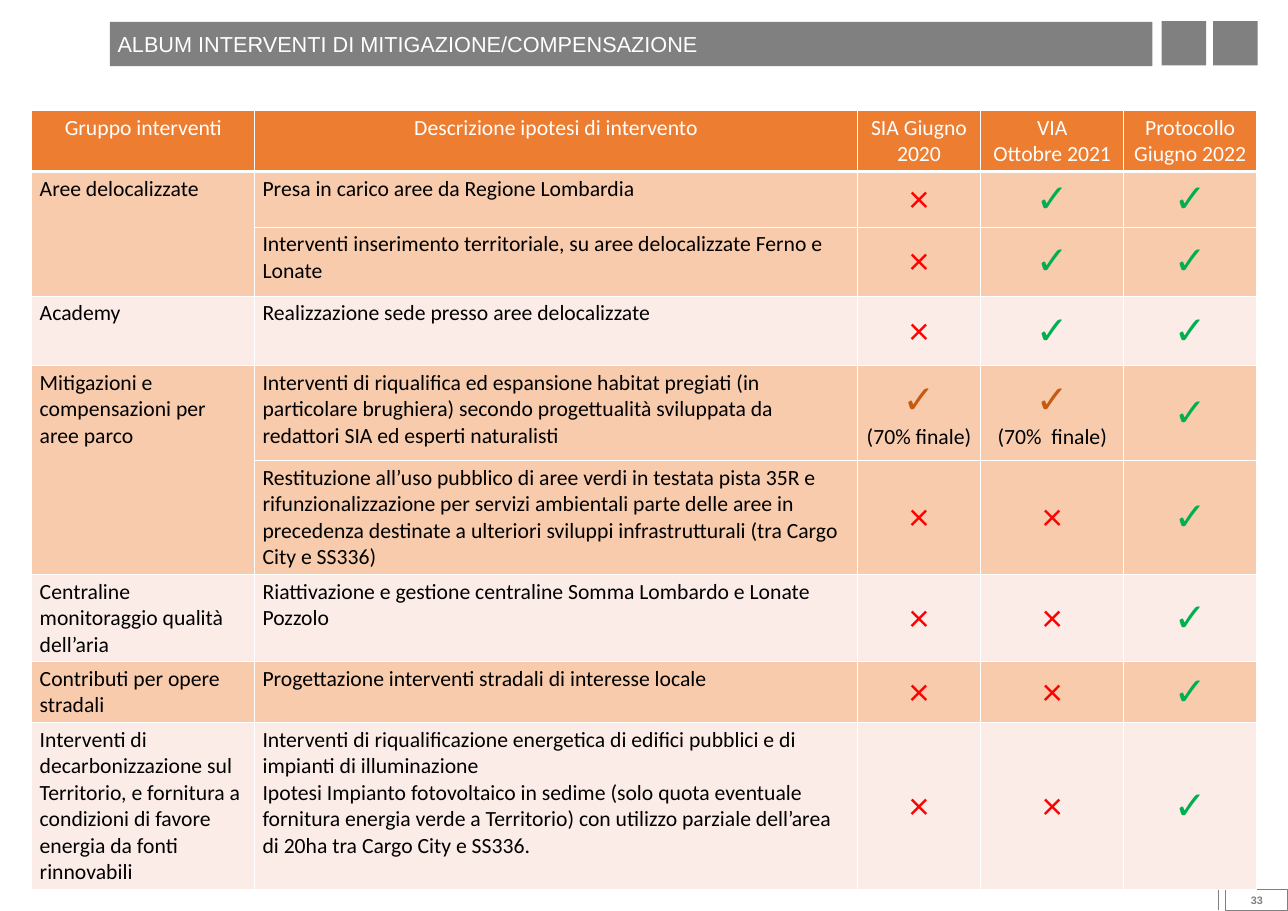
from lxml import etree
from pptx import Presentation
from pptx.dml.color import RGBColor
from pptx.enum.shapes import MSO_CONNECTOR, MSO_SHAPE
from pptx.enum.text import MSO_ANCHOR as Anchor, PP_ALIGN as Align
from pptx.oxml.ns import qn
from pptx.util import Inches, Pt

WHITE = RGBColor(0xFF, 0xFF, 0xFF)
BLACK = RGBColor(0x00, 0x00, 0x00)
GRAY = RGBColor(0x80, 0x80, 0x80)
ORANGE = RGBColor(0xED, 0x7D, 0x31)
PEACH = RGBColor(0xF8, 0xCB, 0xAD)
PINK = RGBColor(0xFC, 0xEC, 0xE8)
RED = RGBColor(0xFF, 0x00, 0x00)
GREEN = RGBColor(0x00, 0xB0, 0x50)
BROWN = RGBColor(0xC5, 0x5A, 0x11)

NO, YES = [("×", 36, RED)], [("✓", 36, GREEN)]
PARTIAL = ("✓", 36, BROWN)

HEADERS = ["Gruppo interventi", "Descrizione ipotesi di intervento", "SIA Giugno 2020",
           "VIA\nOttobre 2021", "Protocollo Giugno 2022"]
COLUMN_WIDTHS = [2.86, 7.73, 1.59, 1.83, 1.71]
ROW_HEIGHTS = [0.76, 0.66, 0.89, 0.89, 1.22, 1.01, 0.75, 0.7, 1.83]

# Group (empty when it continues the one above), fill, description, three outcomes
MEASURES = [
    ("Aree delocalizzate", PEACH, "Presa in carico aree da Regione Lombardia", NO, YES, YES),
    ("", PEACH, "Interventi inserimento territoriale, su aree delocalizzate Ferno e Lonate",
     NO, YES, YES),
    ("Academy", PINK, "Realizzazione sede presso aree delocalizzate", NO, YES, YES),
    ("Mitigazioni e compensazioni per aree parco", PEACH,
     "Interventi di riqualifica ed espansione habitat pregiati (in particolare brughiera) "
     "secondo progettualità sviluppata da redattori SIA ed esperti naturalisti",
     [PARTIAL, ("(70% finale)", 20, BLACK)], [PARTIAL, ("(70%  finale)", 20, BLACK)], YES),
    ("", PEACH,
     "Restituzione all’uso pubblico di aree verdi in testata pista 35R e rifunzionalizzazione "
     "per servizi ambientali parte delle aree in precedenza destinate a ulteriori sviluppi "
     "infrastrutturali (tra Cargo City e SS336)", NO, NO, YES),
    ("Centraline monitoraggio qualità dell’aria", PINK,
     "Riattivazione e gestione centraline Somma Lombardo e Lonate Pozzolo", NO, NO, YES),
    ("Contributi per opere stradali", PEACH,
     "Progettazione interventi stradali di interesse locale", NO, NO, YES),
    ("Interventi di decarbonizzazione sul Territorio, e fornitura a condizioni di favore "
     "energia da fonti rinnovabili", PINK,
     "Interventi di riqualificazione energetica di edifici pubblici e di impianti di "
     "illuminazione\vIpotesi Impianto fotovoltaico in sedime (solo quota eventuale fornitura "
     "energia verde a Territorio) con utilizzo parziale dell’area di 20ha tra Cargo City e "
     "SS336.", NO, NO, YES),
]


def write(frame, lines, align, font_name="Calibri", bold=False):
    """Fill a text frame with one paragraph per (text, size, color) line."""
    for index, (text, size, color) in enumerate(lines):
        para = frame.add_paragraph() if index else frame.paragraphs[0]
        para.text = text
        para.alignment = align
        for span in para.runs:
            for key, value in {"name": font_name, "size": Pt(size), "bold": bold}.items():
                setattr(span.font, key, value)
            span.font.color.rgb = color


def style_cell(cell, fill, bottom_width=1):
    """Give a cell white borders and a solid fill."""
    properties = cell._tc.get_or_add_tcPr()
    for side, width in {"lnL": 1, "lnR": 1, "lnT": 1, "lnB": bottom_width}.items():
        line = etree.SubElement(properties, qn(f"a:{side}"), w=str(Pt(width)))
        solid = etree.SubElement(line, qn("a:solidFill"))
        etree.SubElement(solid, qn("a:srgbClr"), val=str(WHITE))
    cell.fill.solid()
    cell.fill.fore_color.rgb = fill


deck = Presentation()
deck.slide_width, deck.slide_height = Inches(16.53), Inches(11.69)
page = deck.slides.add_slide(deck.slide_layouts[6])

# Page number and its rule
number_box = page.shapes.add_shape(MSO_SHAPE.RECTANGLE, Inches(15.73), Inches(11.41),
                                   Inches(0.8), Inches(0.28))
number_box.shadow.inherit = False
number_box.fill.background()
number_box.line.color.rgb = GRAY
number_box.line.width = Pt(1)
number_box.text_frame.vertical_anchor = Anchor.MIDDLE
write(number_box.text_frame, [("33", 10, GRAY)], Align.CENTER, "Arial", True)

rule = page.shapes.add_connector(MSO_CONNECTOR.STRAIGHT, Inches(15.64), Inches(11.4),
                                 Inches(15.64), Inches(11.68))
rule.line.color.rgb = GRAY
rule.line.width = Pt(1)
etree.SubElement(rule._element.spPr, qn("a:effectLst"))

# Title bar, after its two squares
for left, top, width in [(14.91, 0.27, 0.57), (15.57, 0.27, 0.57), (1.41, 0.28, 13.38)]:
    bar = page.shapes.add_shape(MSO_SHAPE.RECTANGLE, Inches(left), Inches(top),
                                Inches(width), Inches(0.57))
    bar.shadow.inherit = False
    bar.fill.solid()
    bar.fill.fore_color.rgb = GRAY
    bar.line.fill.background()
bar.text_frame.vertical_anchor = Anchor.MIDDLE
write(bar.text_frame, [("ALBUM INTERVENTI DI MITIGAZIONE/COMPENSAZIONE", 20, WHITE)],
      Align.LEFT, "Arial")

# Table of measures
table_frame = page.shapes.add_table(len(ROW_HEIGHTS), len(COLUMN_WIDTHS), Inches(0.41),
                                    Inches(1.42), Inches(15.74), Inches(9.88))
table = table_frame.table
for column, width in zip(table.columns, COLUMN_WIDTHS):
    column.width = Inches(width)
for row, height in zip(table.rows, ROW_HEIGHTS):
    row.height = Inches(height)

for column_index, header in enumerate(HEADERS):
    cell = table.cell(0, column_index)
    style_cell(cell, ORANGE, 3)
    write(cell.text_frame, [(text, 20, WHITE) for text in header.split("\n")], Align.CENTER)

for row_index, (group, fill, description, *outcomes) in enumerate(MEASURES, 1):
    for column_index in range(len(HEADERS)):
        style_cell(table.cell(row_index, column_index), fill)
    if group:
        write(table.cell(row_index, 0).text_frame, [(group, 20, BLACK)], Align.LEFT)
    else:
        table.cell(row_index - 1, 0).merge(table.cell(row_index, 0))
    write(table.cell(row_index, 1).text_frame, [(description, 20, BLACK)], Align.LEFT)
    for column_index, outcome in enumerate(outcomes, 2):
        cell = table.cell(row_index, column_index)
        cell.vertical_anchor = Anchor.MIDDLE
        write(cell.text_frame, outcome, Align.CENTER)

deck.save("out.pptx")
